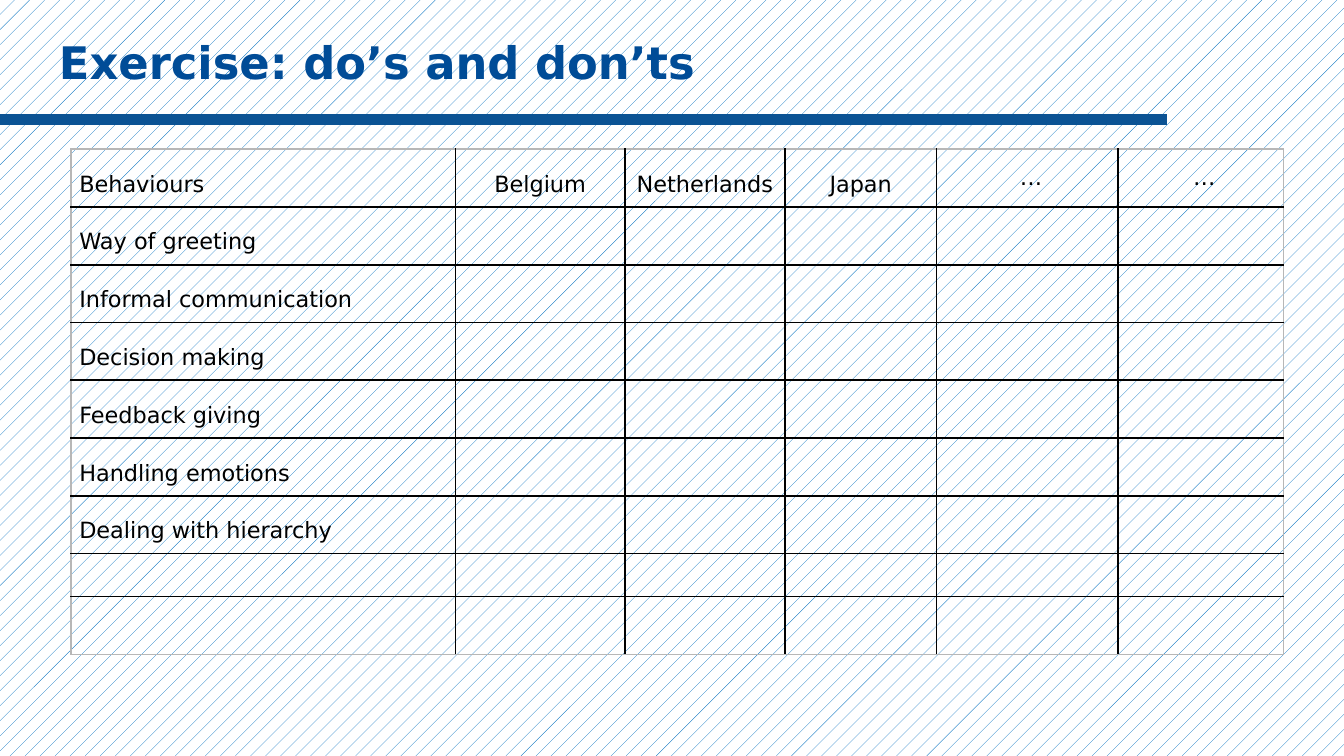
from dataclasses import dataclass

import lxml.etree
import pptx
import pptx.dml.color
import pptx.enum.dml
import pptx.enum.shapes
import pptx.enum.text
import pptx.oxml.ns
import pptx.util

Inches = pptx.util.Inches
Pt = pptx.util.Pt
qualified = pptx.oxml.ns.qn


@dataclass(frozen=True)
class Theme:
    font: str = "DejaVu Sans"
    title_size: int = 24
    body_size: int = 12
    line_spacing: float = 21.6
    title: str = "004C97"
    rule: str = "0B5394"
    text: str = "000000"
    grid: str = "000000"
    frame: str = "B7B7B7"
    hatch: str = "0070C0"
    paper: str = "FFFFFF"


THEME = Theme()
COUNTRIES = ["Belgium", "Netherlands", "Japan", " …", " …"]
BEHAVIOURS = [
    "Way of greeting",
    "Informal communication",
    "Decision making",
    "Feedback giving",
    "Handling emotions",
    "Dealing with hierarchy",
    "",
    "",
]
COLUMN_WIDTHS = [2.86, 1.26, 1.19, 1.13, 1.35, 1.23]
ROW_HEIGHTS = [0.43] * 7 + [0.32, 0.43]


def color(value):
    return pptx.dml.color.RGBColor.from_string(value)


def style_paragraph(paragraph, size, value, bold=False):
    paragraph.font.name = THEME.font
    paragraph.font.size = Pt(size)
    paragraph.font.bold = bold
    paragraph.font.color.rgb = color(value)


def set_margins(target, margin):
    target.margin_left = target.margin_right = Inches(margin)
    target.margin_top = target.margin_bottom = Inches(margin)


def paint_background(slide):
    fill = slide.background.fill
    fill.patterned()
    fill.pattern = pptx.enum.dml.MSO_PATTERN.PERCENT_10
    fill.fore_color.rgb = color(THEME.hatch)
    fill.back_color.rgb = color(THEME.paper)


def add_rule(slide, left, top, width):
    rule = slide.shapes.add_connector(
        pptx.enum.shapes.MSO_CONNECTOR.STRAIGHT,
        Inches(left), Inches(top), Inches(left + width), Inches(top),
    )
    rule.line.color.rgb = color(THEME.rule)
    rule.line.width = Pt(6)
    lxml.etree.SubElement(rule._element.spPr, qualified("a:effectLst"))


def add_title(slide, left, top, width, height):
    box = slide.shapes.add_textbox(
        Inches(left), Inches(top), Inches(width), Inches(height)
    )
    frame = box.text_frame
    frame.word_wrap = True
    frame.vertical_anchor = pptx.enum.text.MSO_ANCHOR.TOP
    set_margins(frame, 0.1)
    paragraph = frame.paragraphs[0]
    paragraph.text = "Exercise: do’s and don’ts"
    style_paragraph(paragraph, THEME.title_size, THEME.title, bold=True)


def set_borders(cell, borders):
    properties = cell._tc.get_or_add_tcPr()
    for index, (side, value) in enumerate(borders.items()):
        line = lxml.etree.Element(qualified(f"a:{side}"), w=str(Pt(1)))
        fill = lxml.etree.SubElement(line, qualified("a:solidFill"))
        lxml.etree.SubElement(fill, qualified("a:srgbClr"), val=value)
        properties.insert(index, line)


def fill_cell(cell, text, centered):
    cell.fill.background()
    set_margins(cell, 0.01 if "…" in text else 0.06)
    paragraph = cell.text_frame.paragraphs[0]
    paragraph.text = text
    style_paragraph(paragraph, THEME.body_size, THEME.text)
    if text:
        paragraph.line_spacing = Pt(THEME.line_spacing)
    if centered:
        paragraph.alignment = pptx.enum.text.PP_ALIGN.CENTER


def add_behaviour_table(slide, left, top, width, height):
    rows = [["Behaviours", *COUNTRIES]]
    rows += [[behaviour] + [""] * len(COUNTRIES) for behaviour in BEHAVIOURS]
    table = slide.shapes.add_table(
        len(rows), len(rows[0]),
        Inches(left), Inches(top), Inches(width), Inches(height),
    ).table
    table.first_row = False
    table.horz_banding = False
    for column, column_width in zip(table.columns, COLUMN_WIDTHS):
        column.width = Inches(column_width)
    for row, row_height in zip(table.rows, ROW_HEIGHTS):
        row.height = Inches(row_height)
    last_row, last_column = len(rows) - 1, len(rows[0]) - 1
    for row_index, texts in enumerate(rows):
        for column_index, text in enumerate(texts):
            cell = table.cell(row_index, column_index)
            fill_cell(cell, text, centered=column_index > 0)
            on_frame = {
                "lnL": column_index == 0,
                "lnR": column_index == last_column,
                "lnT": row_index == 0,
                "lnB": row_index == last_row,
            }
            set_borders(cell, {
                side: THEME.frame if outer else THEME.grid
                for side, outer in on_frame.items()
            })


def build_slide(presentation):
    slide = presentation.slides.add_slide(presentation.slide_layouts[6])
    paint_background(slide)
    add_rule(slide, 0, 0.89, 8.68)
    add_title(slide, 0.34, 0.16, 9.32, 0.63)
    add_behaviour_table(slide, 0.53, 1.11, sum(COLUMN_WIDTHS), sum(ROW_HEIGHTS))


def main():
    presentation = pptx.Presentation()
    presentation.slide_width = Inches(10)
    presentation.slide_height = presentation.slide_width * 9 // 16
    build_slide(presentation)
    presentation.save("out.pptx")


if __name__ == "__main__":
    main()
